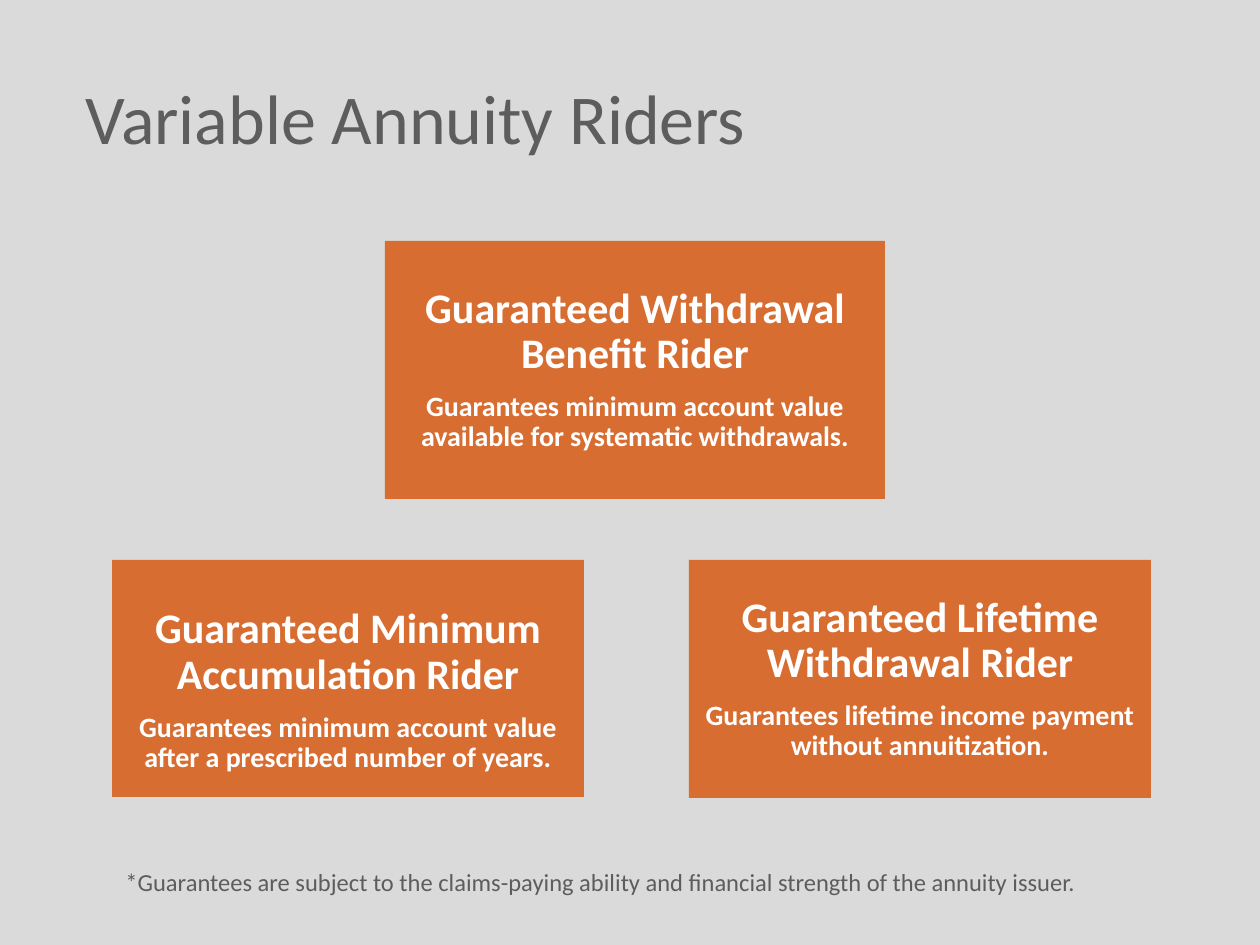
from pptx import Presentation
from pptx.dml.color import RGBColor
from pptx.enum.shapes import MSO_SHAPE
from pptx.enum.text import MSO_ANCHOR, PP_ALIGN
from pptx.util import Pt

PX = 914400 // 126
COLORS = {"background": "DADADA", "text": "5D5D5D", "card": "D76D31", "card text": "FFFFFF"}
FONT = "Calibri"
INSET = 13

TITLE = ("Variable Annuity Riders", (73, 73, 1038, 88))
FOOTNOTE = (
    "*Guarantees are subject to the claims-paying ability and financial strength of the annuity issuer.",
    (113, 861, 1095, 43),
)
# heading, description, (left, top, width, height), top inset
RIDERS = [
    ("Guaranteed Withdrawal Benefit Rider",
     "Guarantees minimum account value available for systematic withdrawals.",
     (385, 241, 500, 258), INSET),
    ("Guaranteed Minimum Accumulation Rider",
     "Guarantees minimum account value after a prescribed number of years.",
     (112, 560, 472, 237), INSET + 24),
    ("Guaranteed Lifetime Withdrawal Rider",
     "Guarantees lifetime income payment without annuitization.",
     (689, 560, 462, 238), INSET),
]


def emu(box):
    return [value * PX for value in box]


def write(paragraph, text, size, color, bold=False, align=PP_ALIGN.LEFT, line=1.0, after=0):
    paragraph.text = text
    paragraph.alignment = align
    paragraph.line_spacing = line
    paragraph.space_after = Pt(after)
    font = paragraph.font
    font.name, font.size, font.bold = FONT, Pt(size), bold
    font.color.rgb = RGBColor.from_string(COLORS[color])


def add_text(slide, text, box, size, anchor):
    frame = slide.shapes.add_textbox(*emu(box)).text_frame
    frame.word_wrap = True
    frame.vertical_anchor = anchor
    write(frame.paragraphs[0], text, size, "text")


def add_card(slide, heading, description, box, top_inset):
    card = slide.shapes.add_shape(MSO_SHAPE.RECTANGLE, *emu(box))
    card.shadow.inherit = False
    card.fill.solid()
    card.fill.fore_color.rgb = RGBColor.from_string(COLORS["card"])
    card.line.fill.background()
    frame = card.text_frame
    frame.word_wrap = True
    frame.vertical_anchor = MSO_ANCHOR.MIDDLE
    frame.margin_left = frame.margin_right = frame.margin_bottom = INSET * PX
    frame.margin_top = top_inset * PX
    style = dict(color="card text", bold=True, align=PP_ALIGN.CENTER, line=0.9)
    write(frame.paragraphs[0], heading, 24, after=8.4, **style)
    write(frame.add_paragraph(), description, 16, **style)


def main():
    presentation = Presentation()
    presentation.slide_width, presentation.slide_height = 1260 * PX, 945 * PX
    slide = presentation.slides.add_slide(presentation.slide_layouts[6])
    slide.background.fill.solid()
    slide.background.fill.fore_color.rgb = RGBColor.from_string(COLORS["background"])

    add_text(slide, *TITLE, size=40, anchor=MSO_ANCHOR.MIDDLE)
    for rider in RIDERS:
        add_card(slide, *rider)
    add_text(slide, *FOOTNOTE, size=14, anchor=MSO_ANCHOR.TOP)
    presentation.save("out.pptx")


if __name__ == "__main__":
    main()
